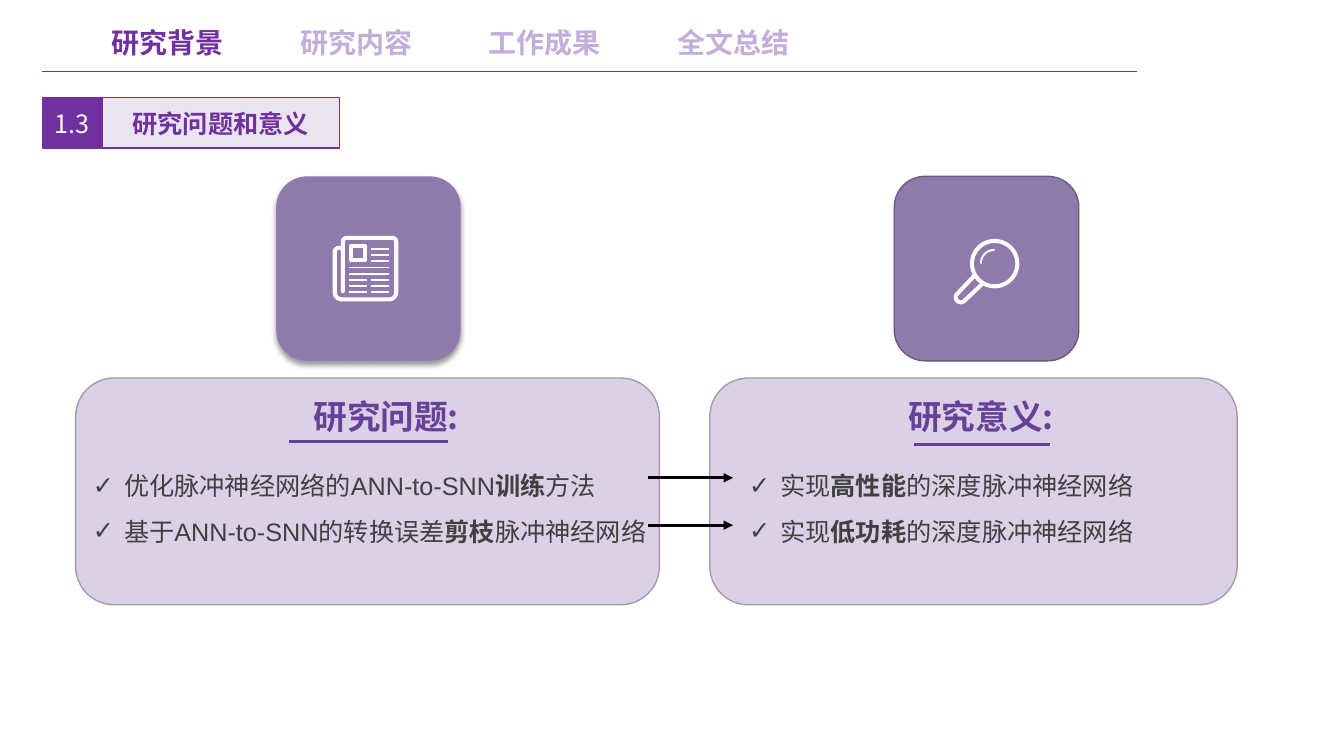
import math

from pptx import Presentation
from pptx import util as u
from pptx.dml.color import RGBColor
from pptx.enum import shapes as s, text as t
from pptx.oxml import parse_xml
from pptx.oxml.ns import qn
from lxml import etree

CJK = "Noto Sans CJK SC"
PURPLE, PALE, VIOLET, TILE, WHITE = "7030A0", "C2ADDB", "674196", "9079AD", "FFFFFF"
A_NS = "http://schemas.openxmlformats.org/drawingml/2006/main"


def colour(value):
    return RGBColor.from_string(value)


def place(shape, left, top, width, height):
    shape.left, shape.top = u.Inches(left), u.Inches(top)
    shape.width, shape.height = u.Inches(width), u.Inches(height)


def style(shape, fill=None, line=None, width=1):
    if fill:
        shape.fill.solid()
        shape.fill.fore_color.rgb = colour(fill)
    else:
        shape.fill.background()
    if line:
        shape.line.color.rgb = colour(line)
        shape.line.width = u.Pt(width)
    else:
        shape.line.fill.background()


def add_box(slide, kind, box, fill=None, line=None, width=1):
    shape = slide.shapes.add_shape(kind, *map(u.Inches, box))
    shape.shadow.inherit = False
    style(shape, fill, line, width)
    return shape


def add_line(slide, start, end, line, width, arrow=False):
    connector = slide.shapes.add_connector(
        s.MSO_CONNECTOR.STRAIGHT, *map(u.Inches, (*start, *end)))
    connector.line.color.rgb = colour(line)
    connector.line.width = u.Pt(width)
    if arrow:
        etree.SubElement(connector.line._get_or_add_ln(), qn("a:tailEnd"), type="triangle")
    etree.SubElement(connector._element.spPr, qn("a:effectLst"))


def add_run(paragraph, words, size, color, bold=False, font=CJK):
    run = paragraph.add_run()
    run.text = words
    run.font.size, run.font.bold, run.font.name = u.Pt(size), bold, font
    run.font.color.rgb = colour(color)
    etree.SubElement(run._r.get_or_add_rPr(), qn("a:ea"), typeface=CJK)


def add_label(slide, box, words, size, color, align):
    label = slide.shapes.add_textbox(*map(u.Inches, box))
    label.text_frame.word_wrap = False
    label.text_frame.auto_size = t.MSO_AUTO_SIZE.SHAPE_TO_FIT_TEXT
    paragraph = label.text_frame.paragraphs[0]
    paragraph.alignment = align
    add_run(paragraph, words, size, color, True)


def add_navigation(slide, left, top):
    for i, chapter in enumerate(["研究背景", "研究内容", "工作成果", "全文总结"]):
        add_label(slide, (left + 0.59 + 1.87 * i, top, 1.32, 0.44), chapter, 20,
                  PALE if i else PURPLE, t.PP_ALIGN.LEFT)
    add_line(slide, (left, top + 0.51), (left + 10.86, top + 0.51), PURPLE, 1)


def add_section_title(slide, left, top):
    number = add_box(slide, s.MSO_SHAPE.RECTANGLE, (left, top, 0.59, 0.5), PURPLE, PURPLE)
    title = slide.shapes.title
    place(title, left + 0.59, top, 2.36, 0.5)
    style(title, "E9E4EF", PURPLE)
    for shape, words, color in ((number, "1.3", WHITE), (title, "研究问题和意义", PURPLE)):
        frame = shape.text_frame
        frame.auto_size = t.MSO_AUTO_SIZE.NONE
        frame.vertical_anchor = t.MSO_ANCHOR.MIDDLE
        frame.paragraphs[0].alignment = t.PP_ALIGN.CENTER
        add_run(frame.paragraphs[0], words, 18, color, shape is title)


def add_checklist(slide, placeholder, box, items):
    """Fill a body placeholder with ticked items; every second part of an item is bold."""
    slide.shapes._spTree.append(placeholder._element)
    place(placeholder, *box)
    frame = placeholder.text_frame
    frame.auto_size = t.MSO_AUTO_SIZE.NONE
    for i, parts in enumerate(items):
        paragraph = frame.add_paragraph() if i else frame.paragraphs[0]
        properties = paragraph._p.get_or_add_pPr()
        properties.set("marL", str(u.Inches(0.31)))
        properties.set("indent", str(-u.Inches(0.31)))
        etree.SubElement(properties, qn("a:buFont"), typeface="Wingdings")
        etree.SubElement(properties, qn("a:buFont")).getparent().remove(properties[-1])
        properties[-1].set("typeface", "Arial")
        etree.SubElement(properties, qn("a:buChar"), char="✓")
        paragraph.line_spacing = 1.5
        paragraph.space_before = u.Pt(0)
        for j, part in enumerate(parts):
            add_run(paragraph, part, 18, "404040", j % 2 == 1, "Arial")


def add_panel(slide, box, heading, heading_left, rule, placeholder, list_box, items):
    """Draw a rounded panel; heading, rule and list are offset from its corner."""
    left, top = box[:2]
    panel = add_box(slide, s.MSO_SHAPE.ROUNDED_RECTANGLE, box, "DBD0E6", "A29AAA")
    panel.adjustments[0] = 0.17
    add_label(slide, (left + heading_left, top + 0.13, 1.64, 0.5), heading, 24, VIOLET,
              t.PP_ALIGN.RIGHT)
    start, end, drop = rule
    add_line(slide, (left + start, top + drop), (left + end, top + drop), VIOLET, 1.5)
    x, width = list_box
    add_checklist(slide, placeholder, (left + x, top + 0.72, width, 0.96), items)


def arc(x, y, radius, start, end):
    """Points along an arc; degrees run clockwise from the right."""
    angles = [math.radians(start + (end - start) * i / 12) for i in range(13)]
    return [(x + radius * math.cos(a), y + radius * math.sin(a)) for a in angles]


def add_stroke(slide, left, top, points, width):
    outline = [(u.Inches(left + x), u.Inches(top + y)) for x, y in points]
    builder = slide.shapes.build_freeform(*outline[0])
    builder.add_line_segments(outline[1:], close=False)
    shape = builder.convert_to_shape()
    shape.shadow.inherit = False
    style(shape, None, WHITE, width)
    shape.line._get_or_add_ln().set("cap", "rnd")


def add_tile(slide, left, top, line=None):
    return add_box(slide, s.MSO_SHAPE.ROUNDED_RECTANGLE, (left, top, 1.83, 1.83), TILE, line)


def add_newspaper_tile(slide, left, top):
    tile = add_tile(slide, left, top)
    effects = tile._element.spPr.find(qn("a:effectLst"))
    effects.append(parse_xml(
        f'<a:outerShdw xmlns:a="{A_NS}" blurRad="{u.Pt(4)}" dist="{u.Pt(3)}" dir="5400000" '
        'rotWithShape="0"><a:srgbClr val="000000"><a:alpha val="40000"/></a:srgbClr>'
        '</a:outerShdw>'))
    x, y = left + 0.56, top + 0.59
    page = ([(0.1, 0.55)] + arc(0.14, 0.06, 0.04, 180, 270) + arc(0.59, 0.06, 0.04, 270, 360)
            + arc(0.56, 0.56, 0.07, 0, 90) + arc(0.09, 0.56, 0.07, 90, 180)
            + arc(0.06, 0.16, 0.04, 180, 270) + [(0.1, 0.12)])
    add_stroke(slide, x, y, page, 2.9)
    add_box(slide, s.MSO_SHAPE.RECTANGLE, (x + 0.18, y + 0.1, 0.14, 0.14), None, WHITE, 2.9)
    left_column, right_column, full_width = (0.16, 0.34), (0.38, 0.56), (0.16, 0.56)
    rows = [[right_column]] * 3 + [[full_width]] * 2 + [[left_column, right_column]] * 3
    for i, row in enumerate(rows):
        for start, end in row:
            line_y = y + 0.13 + 0.43 * i / 7
            add_line(slide, (x + start, line_y), (x + end, line_y), WHITE, 1.4)


def add_magnifier_tile(slide, left, top):
    add_tile(slide, left, top, "6B5A80")
    x, y = left + 0.59, top + 0.62
    add_box(slide, s.MSO_SHAPE.OVAL, (x + 0.18, y + 0.02, 0.45, 0.45), None, WHITE, 2.9)
    add_stroke(slide, x, y, [(0.2, 0.37)] + arc(0.07, 0.58, 0.05, 225, 45) + [(0.28, 0.45)], 2.9)
    add_stroke(slide, x, y, arc(0.4, 0.24, 0.13, 180, 270), 1.4)


def main():
    presentation = Presentation()
    presentation.slide_width, presentation.slide_height = u.Inches(13.33), u.Inches(7.5)
    slide = presentation.slides.add_slide(presentation.slide_layouts[3])
    problem_list, meaning_list = slide.placeholders[1], slide.placeholders[2]

    add_navigation(slide, 0.42, 0.2)
    add_section_title(slide, 0.42, 0.97)
    add_panel(slide, (0.75, 3.75, 5.79, 2.25), "研究问题:", 2.26, (2.12, 3.69, 0.63),
              problem_list, (0.07, 5.73),
              [["优化脉冲神经网络的ANN-to-SNN", "训练", "方法"],
               ["基于ANN-to-SNN的转换误差", "剪枝", "脉冲神经网络"]])
    add_panel(slide, (7.04, 3.75, 5.23, 2.25), "研究意义:", 1.87, (2.03, 3.37, 0.66),
              meaning_list, (0.29, 5.54),
              [["实现", "高性能", "的深度脉冲神经网络"],
               ["实现", "低功耗", "的深度脉冲神经网络"]])
    add_newspaper_tile(slide, 2.74, 1.75)
    add_magnifier_tile(slide, 8.87, 1.75)
    for y in (4.74, 5.21):
        add_line(slide, (6.43, y), (7.27, y), "000000", 2.25, arrow=True)
    presentation.save("out.pptx")


if __name__ == "__main__":
    main()
